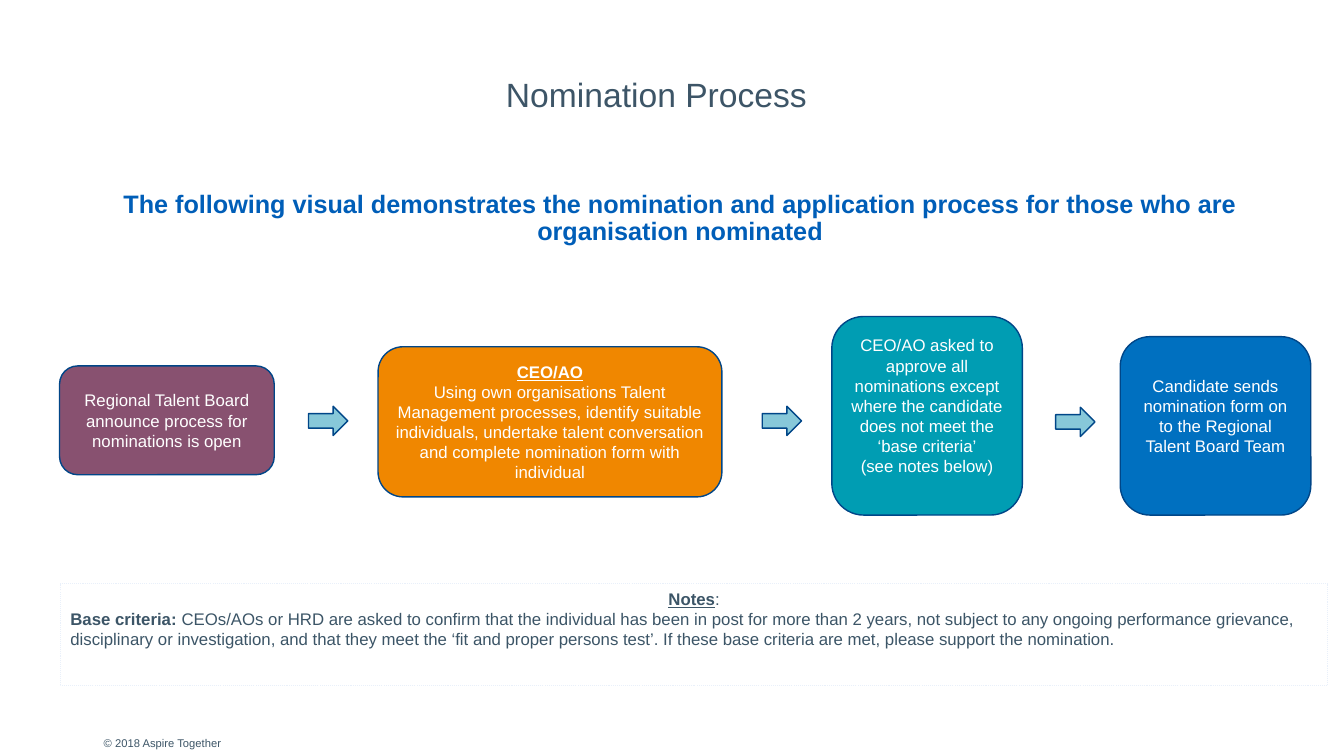
import dataclasses

import pptx
import pptx.dml.color
import pptx.enum.dml
import pptx.enum.shapes
import pptx.enum.text
import pptx.util

SHAPES = pptx.enum.shapes.MSO_SHAPE
ALIGN = pptx.enum.text.PP_ALIGN
ANCHOR = pptx.enum.text.MSO_ANCHOR
SLATE, WHITE, NAVY = "3D5567", "FFFFFF", "004688"


@dataclasses.dataclass
class Box:
    """A rectangle in inches."""
    left: float
    top: float
    width: float
    height: float

    def share(self, left, top, width, height):
        """Return the box at the given percentages of this one."""
        return Box(self.left + self.width * left / 100,
                   self.top + self.height * top / 100,
                   self.width * width / 100, self.height * height / 100)

    def lengths(self):
        """Return left, top, width and height as slide lengths."""
        return [pptx.util.Inches(value) for value in
                (self.left, self.top, self.width, self.height)]


def color(hex_code):
    """Turn a hex string into a colour."""
    return pptx.dml.color.RGBColor.from_string(hex_code)


def write(shape, paragraphs, size, hex_code, align=ALIGN.LEFT,
          anchor=ANCHOR.TOP, spacing=None):
    """Fill a shape with paragraphs, each a list of (text, style) runs."""
    frame = shape.text_frame
    frame.word_wrap = True
    frame.vertical_anchor = anchor
    for index, runs in enumerate(paragraphs):
        paragraph = frame.add_paragraph() if index else frame.paragraphs[0]
        paragraph.alignment = align
        paragraph.line_spacing = spacing
        paragraph.font.name = "Arial"
        paragraph.font.size = pptx.util.Pt(size)
        paragraph.font.color.rgb = color(hex_code)
        for text, style in runs:
            run = paragraph.add_run()
            run.text = text
            if "b" in style:
                run.font.bold = True
            if "u" in style:
                run.font.underline = True


def add_text(slide, box, paragraphs, size, hex_code, **layout):
    """Place a text box."""
    write(slide.shapes.add_textbox(*box.lengths()), paragraphs, size, hex_code, **layout)


def add_outlined(slide, kind, box, fill, line, width):
    """Place a flat preset shape; a fill of None leaves it open."""
    shape = slide.shapes.add_shape(kind, *box.lengths())
    shape.shadow.inherit = False
    if fill:
        shape.fill.solid()
        shape.fill.fore_color.rgb = color(fill)
    else:
        shape.fill.background()
    shape.line.color.rgb = color(line)
    shape.line.width = pptx.util.Pt(width)
    return shape


def add_process(slide, box):
    """Draw the four process steps and the arrows between them."""
    steps = [
        ((0, 24.87, 17.16, 54.8), "885170", 0.05,
         [[("Regional Talent Board announce process for nominations is open", "")]]),
        ((25.46, 15.23, 27.48, 75.6), "F08700", 0.05,
         [[("CEO/AO", "bu")],
          [("Using own organisations Talent Management processes, identify suitable "
            "individuals, undertake talent conversation and complete nomination form "
            "with individual", "")]]),
        ((61.72, 0, 15.23, 100), "009DB3", 0.25,
         [[("CEO/AO asked to approve all nominations except where the candidate "
            "does not meet the ‘base criteria’", "")],
          [("(see notes below)", "")]]),
        ((84.77, 10.15, 15.23, 89.85), "0070C0", 0.25,
         [[("Candidate sends nomination form on to the Regional Talent Board Team", "")]]),
    ]
    for place, fill, bottom_margin, paragraphs in steps:
        step = add_outlined(slide, SHAPES.ROUNDED_RECTANGLE, box.share(*place), fill, NAVY, 1)
        step.text_frame.margin_bottom = pptx.util.Inches(bottom_margin)
        write(step, paragraphs, 12, WHITE, align=ALIGN.CENTER, anchor=ANCHOR.MIDDLE)
    for left, top in ((19.9, 45.18), (56.16, 45.18), (79.61, 45.69)):
        add_outlined(slide, SHAPES.RIGHT_ARROW, box.share(left, top, 3.14, 14.72),
                     "87C8D9", NAVY, 1)


def add_notes_panel(slide, box):
    """Draw the dotted panel that explains the base criteria."""
    panel = add_outlined(slide, SHAPES.RECTANGLE, box, None, "E9F0FA", 0.75)
    panel.line.dash_style = pptx.enum.dml.MSO_LINE.ROUND_DOT
    write(panel, [
        [("Notes", "bu"), (":", "")],
        [("Base criteria: ", "b"),
         ("CEOs/AOs or HRD are asked to confirm that the individual has been in post "
          "for more than 2 years, not subject to any ongoing performance grievance, "
          "disciplinary or investigation, and that they meet the ‘fit and proper "
          "persons test’. If these base criteria are met, please support the "
          "nomination.", "")],
    ], 12, "3C5567")
    panel.text_frame.paragraphs[0].alignment = ALIGN.CENTER


def add_headings(slide, box):
    """Place the title and the introduction."""
    add_text(slide, box.share(36.91, 9.73, 26.18, 6.13),
             [[("Nomination Process", "")]], 24, SLATE, spacing=0.9)
    add_text(slide, box.share(3.08, 24.67, 95.05, 10.53),
             [[("The following visual demonstrates the nomination and application "
                "process for those who are organisation nominated", "b")]],
             18, "005EB8", align=ALIGN.CENTER, spacing=0.9)


def add_footer(slide, box):
    """Place the copyright line."""
    add_text(slide, box, [[("© 2018 Aspire Together", "")]], 8, SLATE)


def main():
    """Build and save the slide."""
    presentation = pptx.Presentation()
    page = Box(0, 0, 13.33, 7.5)
    presentation.slide_width, presentation.slide_height = page.lengths()[2:]
    slide = presentation.slides.add_slide(presentation.slide_layouts[6])
    add_footer(slide, page.share(6.98, 96.8, 93.02, 3.2))
    add_headings(slide, page)
    add_notes_panel(slide, page.share(4.5, 77.2, 94.3, 13.47))
    add_process(slide, page.share(4.43, 41.87, 93.1, 26.27))
    presentation.save("out.pptx")


if __name__ == "__main__":
    main()
